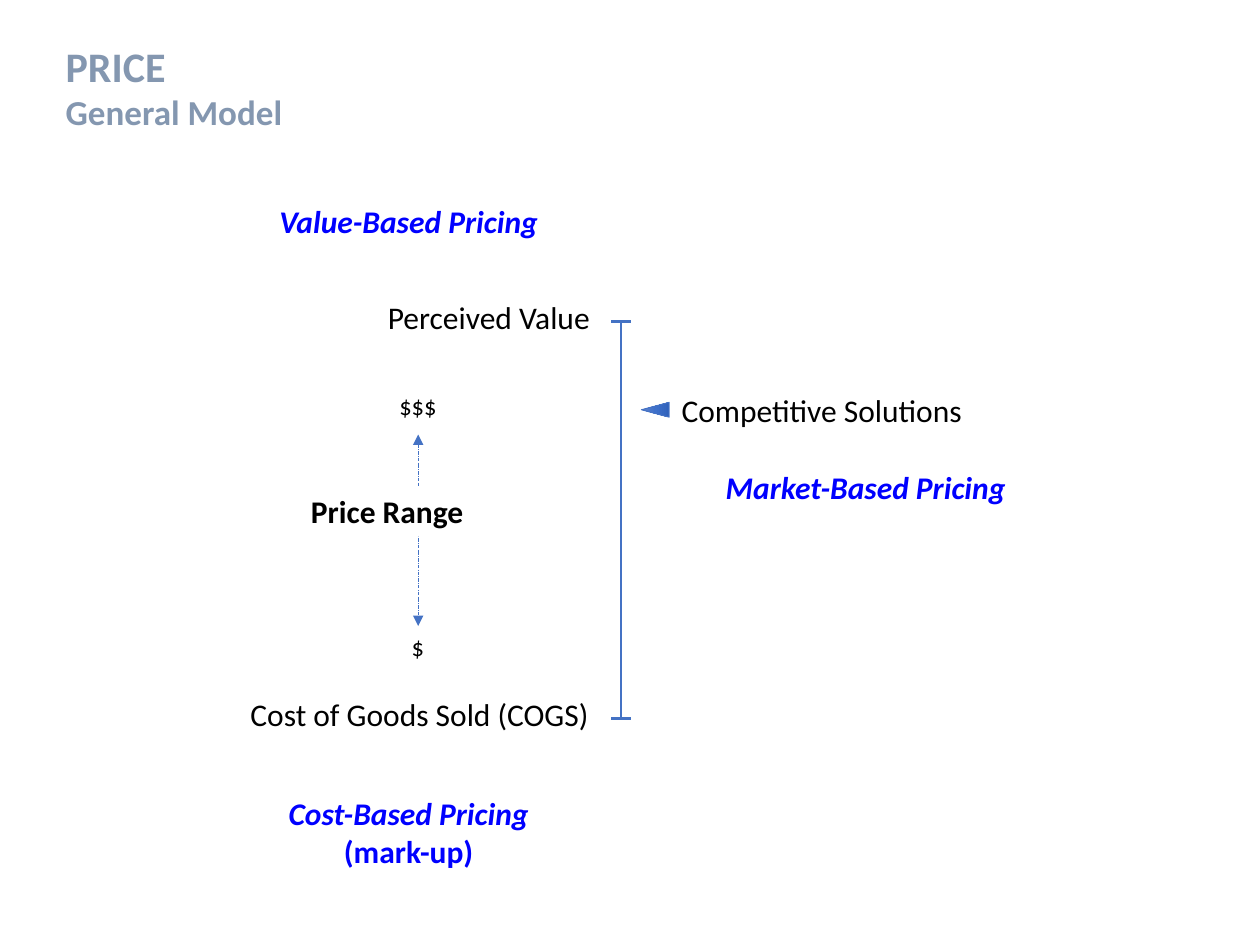
"""Build the general price model slide."""
from copy import deepcopy

from lxml.etree import SubElement
from pptx import Presentation
from pptx.dml.color import RGBColor
from pptx.enum.dml import MSO_LINE
from pptx.enum.shapes import MSO_CONNECTOR, MSO_SHAPE
from pptx.enum.text import MSO_ANCHOR, PP_ALIGN
from pptx.oxml.ns import qn
from pptx.util import Cm, Pt

BLACK, BLUE, ACCENT, SLATE, WHITE = "000000", "0000FF", "4472C4", "8497B0", "FFFFFF"
TITLE = [("PRICE", 24), ("General Model", 20)]
TITLE_PLACE = (1.07, 0.69, 10.72, 2.13)
LABELS = [
    ("Cost of Goods Sold (COGS)", (4.8, 13.89, 7.42, 1.02)),
    ("Perceived Value", (7.57, 5.89, 4.62, 1.02)),
    ("Competitive Solutions", (13.49, 7.75, 6.25, 1.02)),
]
STRATEGIES = [
    (["Value-Based Pricing"], (5.28, 3.94, 5.92, 1.02), PP_ALIGN.CENTER),
    (["Market-Based Pricing"], (14.38, 9.32, 6.25, 1.02), PP_ALIGN.LEFT),
    (["Cost-Based Pricing", "(mark-up)"], (5.46, 15.88, 5.56, 1.8), PP_ALIGN.CENTER),
]
HIGH_PRICE = ("$$$", (7.8, 7.75, 1.27, 0.86))
LOW_PRICE = ("$", (8.05, 12.62, 0.76, 0.86))
PRICE_RANGE = ("Price Range", (6.02, 9.8, 3.61, 1.02))
AXIS_X, AXIS_TOP, AXIS_BOTTOM, CAP = 12.52, 6.48, 14.48, 0.2
RANGE_X, RANGE_TOP, RANGE_BOTTOM = 8.43, 8.76, 12.62
POINTER_PLACE = (13.06, 7.98, 0.3, 0.56)
POINTER_STOPS = [(0, "6183CB"), (0.5, "3E70CA"), (1, "3062BB")]


def colour(value):
    return RGBColor.from_string(value)


def lengths(place):
    return [Cm(value) for value in place]


def format_para(para, size, value, bold=False, italic=False, align=PP_ALIGN.LEFT):
    para.alignment = align
    font = para.font
    font.name, font.size, font.bold, font.italic = "Calibri", Pt(size), bold, italic
    font.color.rgb = colour(value)


def add_text(page, lines, place, wrap=False):
    box = page.shapes.add_textbox(*lengths(place))
    box.text_frame.text = "\n".join(lines)
    box.text_frame.word_wrap = wrap
    return box


def add_plate(page, text, place, size, bold=False):
    plate = page.shapes.add_shape(MSO_SHAPE.RECTANGLE, *lengths(place))
    plate.shadow.inherit = False
    plate.fill.solid()
    plate.fill.fore_color.rgb = colour(WHITE)
    plate.line.fill.background()
    frame = plate.text_frame
    frame.text, frame.word_wrap = text, False
    frame.vertical_anchor = MSO_ANCHOR.TOP
    format_para(frame.paragraphs[0], size, BLACK, bold)
    return plate


def add_line(page, ends, width):
    line = page.shapes.add_connector(MSO_CONNECTOR.STRAIGHT, *lengths(ends))
    line.line.color.rgb = colour(ACCENT)
    line.line.width = Pt(width)
    SubElement(line._element.spPr, qn("a:effectLst"))
    return line


def add_title(page):
    title = page.shapes.title
    title.left, title.top, title.width, title.height = lengths(TITLE_PLACE)
    frame = title.text_frame
    frame.text = "\n".join(text for text, size in TITLE)
    frame.vertical_anchor = MSO_ANCHOR.TOP
    for para, (text, size) in zip(frame.paragraphs, TITLE):
        format_para(para, size, SLATE, bold=True)
        para.space_before = Pt(0)


def add_pointer(page):
    pointer = page.shapes.add_shape(MSO_SHAPE.ISOSCELES_TRIANGLE, *lengths(POINTER_PLACE))
    pointer.shadow.inherit = False
    pointer.rotation = 270
    pointer.line.color.rgb = colour(ACCENT)
    pointer.line.width = Pt(0.5)
    pointer.fill.gradient()
    pointer.fill.gradient_angle = 270
    first = pointer.fill.gradient_stops[0]._gs
    first.addnext(deepcopy(first))
    for stop, (position, value) in zip(pointer.fill.gradient_stops, POINTER_STOPS):
        stop.position = position
        stop.color.rgb = colour(value)


def add_axis(page):
    add_line(page, (AXIS_X, AXIS_TOP, AXIS_X, AXIS_BOTTOM), 1.5)
    for y in (AXIS_TOP, AXIS_BOTTOM):
        add_line(page, (AXIS_X - CAP, y, AXIS_X + CAP, y), 1.5)


def add_price_range(page):
    add_plate(page, *HIGH_PRICE, 14)
    low = add_plate(page, *LOW_PRICE, 14)
    arrow = add_line(page, (RANGE_X, RANGE_TOP, RANGE_X, RANGE_BOTTOM), 0.25)
    arrow.end_connect(low, 0)
    arrow.line.dash_style = MSO_LINE.LONG_DASH_DOT
    for end in ("a:headEnd", "a:tailEnd"):
        SubElement(arrow.line._get_or_add_ln(), qn(end), type="triangle")
    add_plate(page, *PRICE_RANGE, 18, bold=True)


def main():
    deck = Presentation()
    deck.slide_width, deck.slide_height = Cm(25.4), Cm(19.05)
    page = deck.slides.add_slide(deck.slide_layouts[5])
    add_title(page)
    for text, place in LABELS:
        box = add_text(page, [text], place)
        format_para(box.text_frame.paragraphs[0], 18, BLACK)
    add_pointer(page)
    add_axis(page)
    add_price_range(page)
    for lines, place, align in STRATEGIES:
        box = add_text(page, lines, place, wrap=True)
        for index, para in enumerate(box.text_frame.paragraphs):
            format_para(para, 18, BLUE, True, index == 0, align)
    deck.save("out.pptx")


if __name__ == "__main__":
    main()
